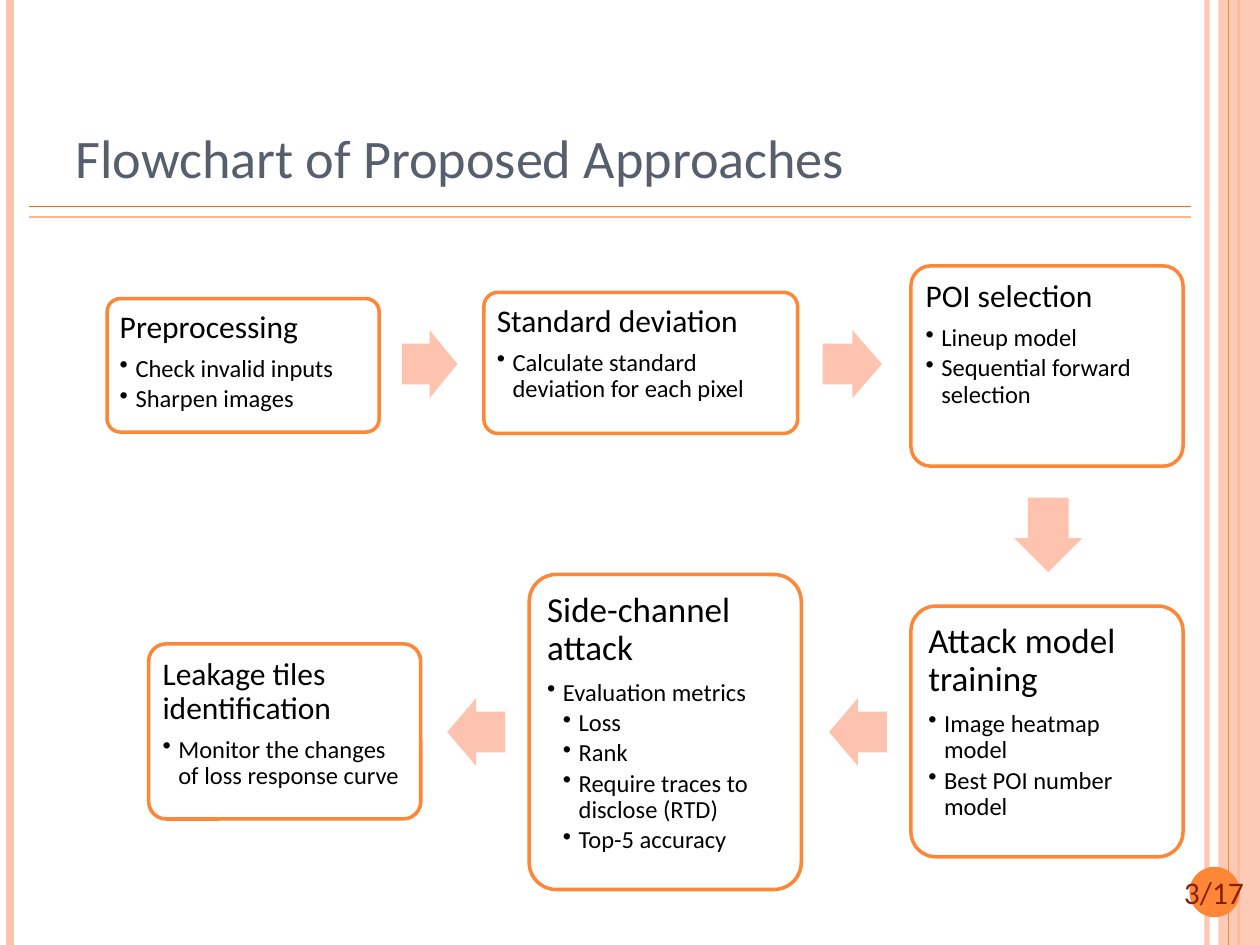
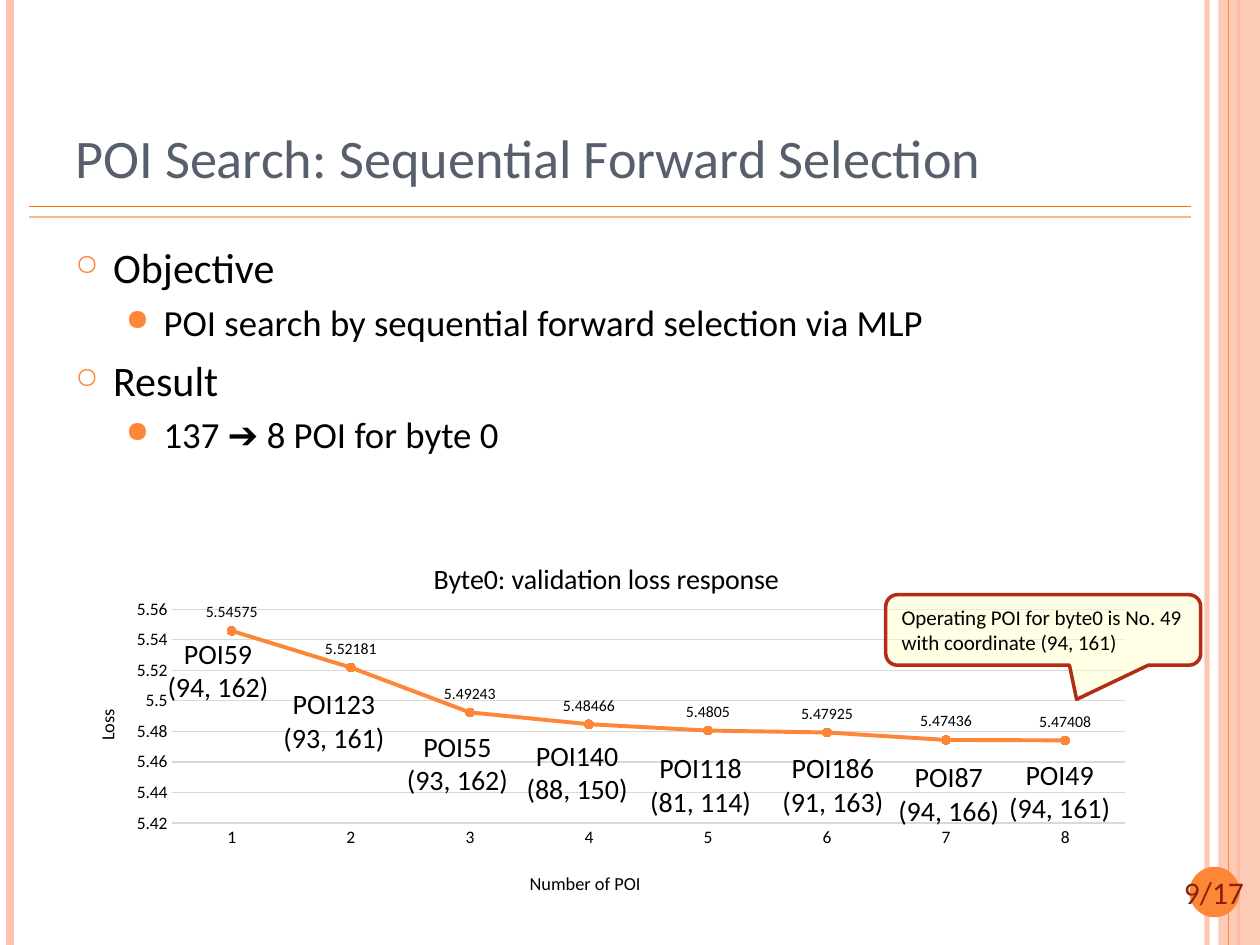
from lxml import etree
from pptx import Presentation
from pptx import util as u
from pptx.chart.data import CategoryChartData
from pptx.dml.color import RGBColor
from pptx.enum import chart as charts, shapes, text
from pptx.oxml.ns import qn

FONT = "Calibri"
BLACK, WHITE = "000000", "FFFFFF"
ORANGE, PEACH, GREY = "FE8637", "FEC3AE", "D9D9D9"
SLATE, BRICK, RED, CREAM = "575F6D", "862110", "B32C16", "FFFFCC"
KIND = shapes.MSO_SHAPE
TOTAL = 17

STRIPES = [
    (9.58, 0, 9.58, 7.5, PEACH, 3, 93),
    (0.08, 0, 0.08, 7.5, PEACH, 4.5, 100),
    (9.83, 0, 9.83, 7.5, ORANGE, 1.5, 100),
]
RULES = [
    (9.75, 0, 9.75, 7.5, ORANGE, 0.75, 100),
    (0.23, 1.64, 9.45, 1.64, "FF6B0A", 1, 100),
    (0.23, 1.72, 9.45, 1.72, "FEB687", 1, 100),
]

STEPS = [
    ((0.85, 2.37, 2.16, 1.06), "Preprocessing", 18,
     [(1, "Check invalid inputs"), (1, "Sharpen images")]),
    ((3.84, 2.32, 2.49, 1.12), "Standard deviation", 18,
     [(1, "Calculate standard deviation for each pixel")]),
    ((7.23, 2.11, 2.16, 1.59), "POI selection", 18,
     [(1, "Lineup model"), (1, "Sequential forward selection")]),
    ((7.23, 4.81, 2.16, 1.99), "Attack model training", 20,
     [(1, "Image heatmap model"), (1, "Best POI number model")]),
    ((4.2, 4.56, 2.16, 2.5), "Side-channel attack", 20,
     [(1, "Evaluation metrics"), (2, "Loss"), (2, "Rank"),
      (2, "Require traces to disclose (RTD)"), (2, "Top-5 accuracy")]),
    ((1.18, 5.11, 2.16, 1.39), "Leakage tiles identification", 18,
     [(1, "Monitor the changes of loss response curve")]),
]
ARROWS = [
    (KIND.RIGHT_ARROW, (3.19, 2.62, 0.44, 0.54)),
    (KIND.RIGHT_ARROW, (6.53, 2.62, 0.47, 0.54)),
    (KIND.DOWN_ARROW, (8.05, 3.95, 0.54, 0.59)),
    (KIND.LEFT_ARROW, (6.58, 5.54, 0.46, 0.54)),
    (KIND.LEFT_ARROW, (3.55, 5.54, 0.46, 0.54)),
]

OUTLINE = [
    (0, "Objective"),
    (1, "POI search by sequential forward selection via MLP"),
    (0, "Result"),
    (1, "137 ➔ 8 POI for byte 0"),
]
LOSSES = [5.54575, 5.52181, 5.49243, 5.48466, 5.4805, 5.47925, 5.47436, 5.47408]
POIS = [
    (1.22, 5, "POI59", "(94, 162)"),
    (2.14, 5.4, "POI123", "(93, 161)"),
    (3.12, 5.74, "POI55", "(93, 162)"),
    (4.07, 5.81, "POI140", "(88, 150)"),
    (5.05, 5.91, "POI118", "(81, 114)"),
    (6.1, 5.91, "POI186", "(91, 163)"),
    (7.02, 5.98, "POI87", "(94, 166)"),
    (7.9, 5.96, "POI49", "(94, 161)"),
]


def rgb(color):
    return RGBColor.from_string(color)


def inches(values):
    return [u.Inches(v) for v in values]


def paint(fill, color, alpha=100):
    fill.solid()
    fill.fore_color.rgb = rgb(color)
    if alpha < 100:
        clr = fill._xPr.find(".//" + qn("a:srgbClr"))
        etree.SubElement(clr, qn("a:alpha"), val=str(alpha * 1000))


def style_font(font, size, color=BLACK):
    font.name = FONT
    font.size = u.Pt(size)
    font.bold = False
    font.color.rgb = rgb(color)


def add_line(s, x1, y1, x2, y2, color, width, alpha):
    line = s.shapes.add_connector(
        shapes.MSO_CONNECTOR.STRAIGHT, *inches((x1, y1, x2, y2)))
    line.line.width = u.Pt(width)
    paint(line.line.fill, color, alpha)
    etree.SubElement(line._element.spPr, qn("a:effectLst"))


def add_block(s, kind, box, fill, alpha=100, line=None, adj=()):
    sp = s.shapes.add_shape(kind, *inches(box))
    sp.shadow.inherit = False
    paint(sp.fill, fill, alpha)
    if line:
        sp.line.color.rgb = rgb(line)
        sp.line.width = u.Pt(2)
    else:
        sp.line.fill.background()
    for i, value in enumerate(adj):
        sp.adjustments[i] = value
    return sp


def add_box(s, box, wrap=True):
    tf = s.shapes.add_textbox(*inches(box)).text_frame
    tf.word_wrap = wrap
    return tf


def add_paragraph(tf, words, size, color=BLACK, align=text.PP_ALIGN.LEFT):
    p = tf.paragraphs[0]
    if p.runs:
        p = tf.add_paragraph()
    p.alignment = align
    r = p.add_run()
    r.text = words
    style_font(r.font, size, color)
    return p


def add_bullet(p, char, left, hang, color=None, percent=100):
    pPr = p._p.get_or_add_pPr()
    pPr.set("marL", str(u.Inches(left)))
    pPr.set("indent", str(-u.Inches(hang)))
    if color:
        clr = etree.SubElement(pPr, qn("a:buClr"))
        etree.SubElement(clr, qn("a:srgbClr"), val=color)
    etree.SubElement(pPr, qn("a:buSzPct"), val=str(percent * 1000))
    etree.SubElement(pPr, qn("a:buChar"), char=char)


def add_frame(prs, title, number):
    s = prs.slides.add_slide(prs.slide_layouts[6])
    for stripe in STRIPES:
        add_line(s, *stripe)
    add_block(s, KIND.RECTANGLE, (9.67, 0, 0.33, 7.5), PEACH, 87)
    for rule in RULES:
        add_line(s, *rule)
    add_block(s, KIND.OVAL, (9.44, 6.88, 0.4, 0.4), ORANGE)
    tf = add_box(s, (9.18, 6.88, 0.91, 0.4))
    add_paragraph(tf, f"{number}/{TOTAL}", 18, BRICK, text.PP_ALIGN.CENTER)
    tf = add_box(s, (0.5, 0.3, 8.17, 1.25))
    tf.vertical_anchor = text.MSO_ANCHOR.BOTTOM
    add_paragraph(tf, title, 31, SLATE)
    return s


def add_step(s, box, heading, size, items):
    sp = add_block(s, KIND.ROUNDED_RECTANGLE, box, WHITE, line=ORANGE, adj=[0.1])
    tf = sp.text_frame
    tf.word_wrap = True
    tf.vertical_anchor = text.MSO_ANCHOR.TOP
    inset = u.Inches(0.07 if size == 18 else 0.08)
    tf.margin_left = tf.margin_right = tf.margin_top = tf.margin_bottom = inset
    p = add_paragraph(tf, heading, size)
    p.line_spacing = 0.9
    p.space_after = u.Pt(0.35 * size)
    for level, words in items:
        p = add_paragraph(tf, words, 14)
        add_bullet(p, "•", 0.125 * level, 0.125)
        p.line_spacing = 0.9
        p.space_after = u.Pt(2.1)


def add_outline(s):
    tf = add_box(s, (0.5, 1.87, 8.17, 5.21))
    for i, (level, words) in enumerate(OUTLINE):
        p = add_paragraph(tf, words, 21 if level else 24)
        if level:
            add_bullet(p, "●", 0.7, 0.3, ORANGE, 80)
        else:
            add_bullet(p, "○", 0.3, 0.3, ORANGE, 70)
        if i:
            p.space_before = u.Pt(4.2 if level else 6)


def set_layout(parent, index, inner=False, **sizes):
    for old in parent.findall(qn("c:layout")):
        parent.remove(old)
    layout = etree.Element(qn("c:layout"))
    parent.insert(index, layout)
    manual = etree.SubElement(layout, qn("c:manualLayout"))
    if inner:
        etree.SubElement(manual, qn("c:layoutTarget"), val="inner")
    for mode in ("xMode", "yMode"):
        etree.SubElement(manual, qn("c:" + mode), val="edge")
    for key, value in sizes.items():
        etree.SubElement(manual, qn("c:" + key), val=str(value))


def set_title(title, words, size, x, y):
    add_paragraph(title.text_frame, words, size, align=text.PP_ALIGN.CENTER)
    set_layout(title._element, 1, x=x, y=y)


def style_axis(axis):
    axis.major_tick_mark = axis.minor_tick_mark = charts.XL_TICK_MARK.NONE
    style_font(axis.tick_labels.font, 10)


def add_loss_chart(s):
    data = CategoryChartData()
    data.categories = [str(i + 1) for i in range(len(LOSSES))]
    data.add_series("Series 1", LOSSES)
    chart = s.shapes.add_chart(
        charts.XL_CHART_TYPE.LINE_MARKERS, *inches((0.47, 4.22, 8.62, 3)), data).chart
    style_font(chart.font, 10)
    chart.has_legend = False
    set_title(chart.chart_title, "Byte0: validation loss response", 16, 0.34, 0.06)
    set_layout(chart._chartSpace.chart.plotArea, 0, True, x=0.104, y=0.205, w=0.877, h=0.566)

    cat, val = chart.category_axis, chart.value_axis
    style_axis(cat)
    cat.format.line.color.rgb = rgb(GREY)
    cat.format.line.width = u.Pt(0.75)
    set_title(cat.axis_title, "Number of POI", 10.5, 0.43, 0.89)
    style_axis(val)
    val.minimum_scale, val.maximum_scale, val.major_unit = 5.42, 5.56, 0.02
    val.format.line.fill.background()
    val.major_gridlines.format.line.color.rgb = rgb(GREY)
    val.major_gridlines.format.line.width = u.Pt(0.75)
    set_title(val.axis_title, "Loss", 10.5, 0.03, 0.46)
    val.axis_title.text_frame._txBody.bodyPr.set("rot", "-5400000")

    plot = chart.plots[0]
    plot.vary_by_categories = False
    series = plot.series[0]
    series.smooth = False
    series.format.line.color.rgb = rgb(ORANGE)
    series.format.line.width = u.Pt(2.25)
    series.marker.style = charts.XL_MARKER_STYLE.CIRCLE
    series.marker.size = 5
    paint(series.marker.format.fill, ORANGE)
    series.marker.format.line.color.rgb = rgb(ORANGE)
    labels = series.data_labels
    labels.show_value = True
    labels.position = charts.XL_LABEL_POSITION.ABOVE
    style_font(labels.font, 9)


def add_poi(s, x, y, *lines):
    tf = add_box(s, (x, y, 1.02, 0.64), wrap=False)
    for words in lines:
        add_paragraph(tf, words, 16, align=text.PP_ALIGN.CENTER)


def add_callout(s, *lines):
    sp = add_block(s, KIND.ROUNDED_RECTANGULAR_CALLOUT, (7.03, 4.72, 2.5, 0.56),
                   CREAM, 50, RED, (0.106, 0.985, 0.167))
    tf = sp.text_frame
    tf.word_wrap = False
    tf.vertical_anchor = text.MSO_ANCHOR.MIDDLE
    for words in lines:
        add_paragraph(tf, words, 12)


def main():
    prs = Presentation()
    prs.slide_width, prs.slide_height = inches((10, 7.5))

    s = add_frame(prs, "Flowchart of Proposed Approaches", 3)
    for step in STEPS:
        add_step(s, *step)
    for kind, box in ARROWS:
        add_block(s, kind, box, PEACH, adj=(0.6, 0.5))

    s = add_frame(prs, "POI Search: Sequential Forward Selection", 9)
    add_outline(s)
    add_loss_chart(s)
    for poi in POIS:
        add_poi(s, *poi)
    add_callout(s, "Operating POI for byte0 is No. 49", "with coordinate (94, 161)")

    prs.save("out.pptx")


if __name__ == "__main__":
    main()
